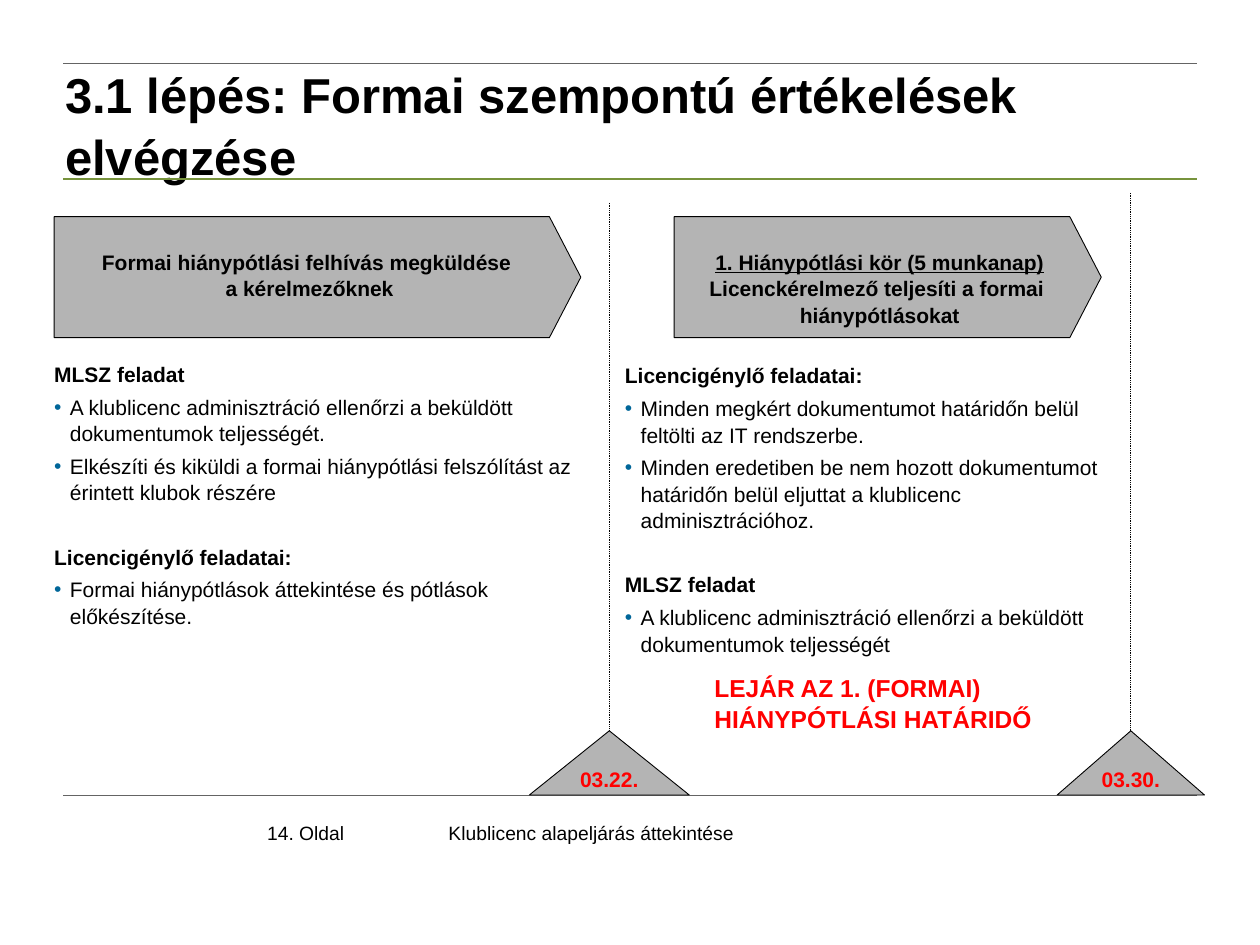
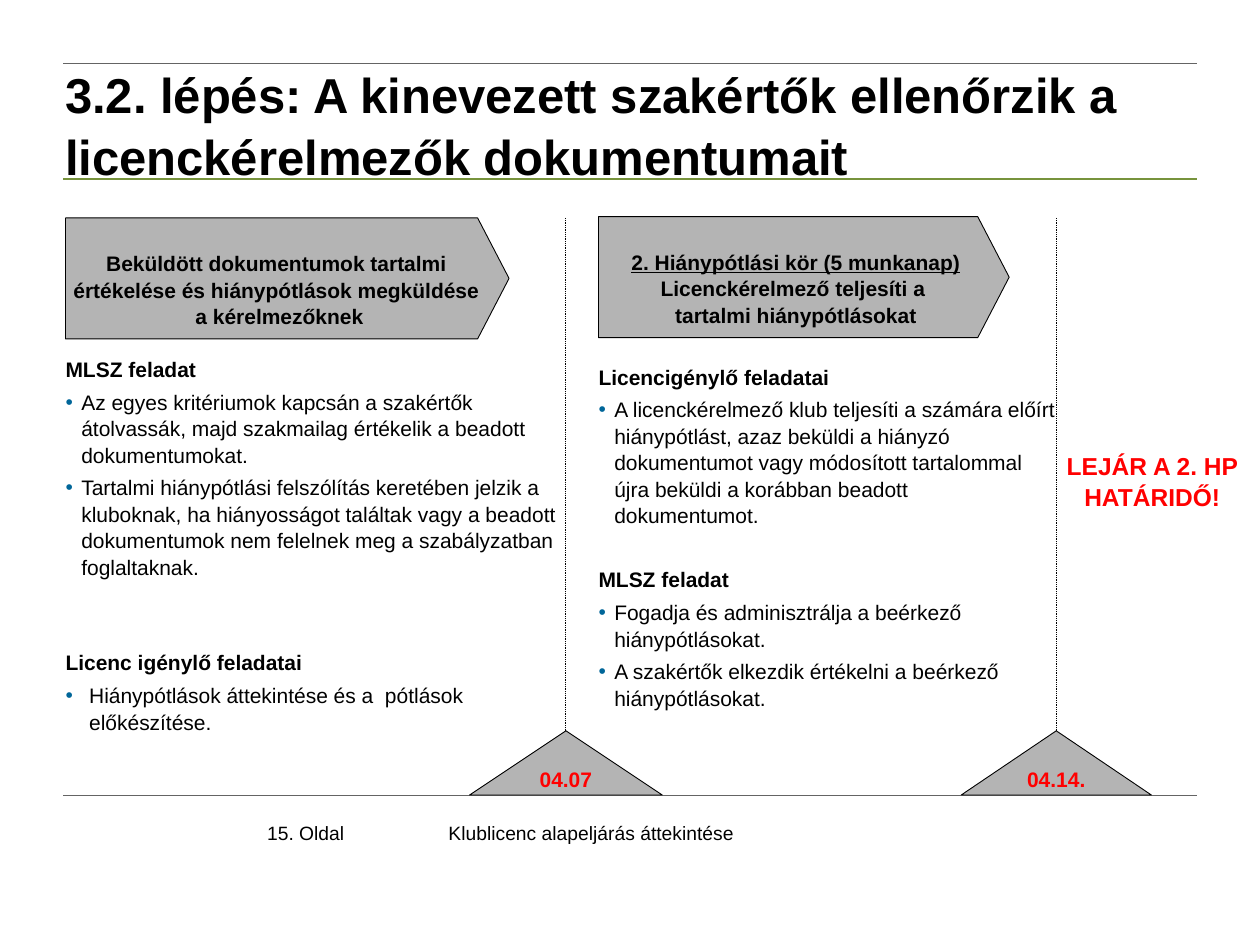
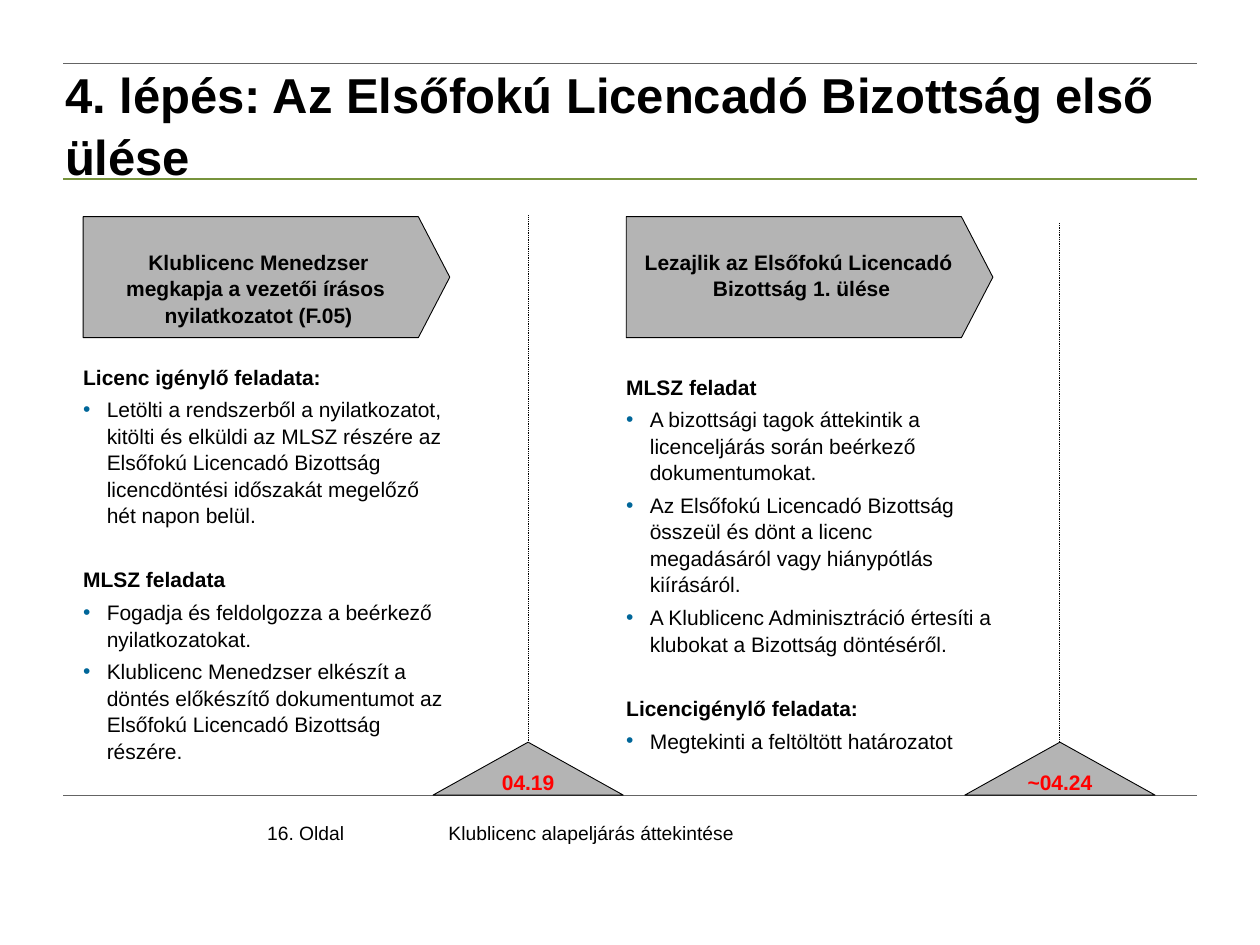
from lxml.etree import SubElement
from pptx import Presentation
from pptx.dml.color import RGBColor
from pptx.enum.dml import MSO_LINE
from pptx.enum.shapes import MSO_CONNECTOR, MSO_SHAPE
from pptx.enum.text import MSO_ANCHOR, MSO_AUTO_SIZE, PP_ALIGN
from pptx.oxml.ns import qn
from pptx.util import Pt

# Shared look
FONT = "Arial"
BLACK, RED, GREY = "000000", "FF0000", "B4B4B4"
RULE, GREEN, BLUE = "646464", "77933C", "006699"
LEFT, RIGHT, BASE = 36, 684, 454.32
PLATE = 69.12
GAP = 18
LABEL = "Klublicenc alapeljárás áttekintése"
rgb = RGBColor.from_string


def style(frame, size, color=BLACK, bold=False, align=PP_ALIGN.LEFT,
          inset=(0, 0, 0, 0), anchor=MSO_ANCHOR.TOP, wrap=True):
    frame.auto_size = MSO_AUTO_SIZE.NONE
    frame.word_wrap = wrap
    frame.vertical_anchor = anchor
    frame.margin_left, frame.margin_top, frame.margin_right, frame.margin_bottom = map(Pt, inset)
    for para in frame.paragraphs:
        para.alignment = align
        para.line_spacing = 1.05
        for run in para.runs:
            run.font.name = FONT
            run.font.size = Pt(size)
            run.font.bold = bold
            run.font.color.rgb = rgb(color)


def rule(slide, x1, y1, x2, y2, color, width):
    line = slide.shapes.add_connector(MSO_CONNECTOR.STRAIGHT, Pt(x1), Pt(y1), Pt(x2), Pt(y2))
    line.line.color.rgb = rgb(color)
    line.line.width = Pt(width)
    SubElement(line._element.spPr, qn("a:effectLst"))
    return line


# Each step holds two stages: plate, list (blocks of gap, indent, head, items) and date marker
STEPS = [
    {
        "title": "3.1 lépés: Formai szempontú értékelések elvégzése",
        "peak": 417.6,
        "alert": ("LEJÁR AZ 1. (FORMAI) HIÁNYPÓTLÁSI HATÁRIDŐ",
                  (408.24, 383.76, 211.68, 88.56), PP_ALIGN.LEFT),
        "stages": [
            {
                "plate": (30.96, 123.84, 300.96), "under": False,
                "head": "Formai hiánypótlási felhívás megküldése \na kérelmezőknek",
                "list": (30.96, 205.92, 300.96, 179.28),
                "blocks": [
                    (0, 9, "MLSZ feladat", [
                        "A klublicenc adminisztráció ellenőrzi a beküldött dokumentumok teljességét.",
                        "Elkészíti és kiküldi a formai hiánypótlási felszólítást az érintett klubok részére"]),
                    (GAP, 9, "Licencigénylő feladatai:", [
                        "Formai hiánypótlások áttekintése és pótlások előkészítése."]),
                ],
                "mark": (348.2, 91.44, 115.92, "03.22."),
            },
            {
                "plate": (385.2, 123.84, 244.08), "under": True,
                "head": "1. Hiánypótlási kör (5 munkanap)\nLicenckérelmező teljesíti a formai \nhiánypótlásokat",
                "list": (357.12, 206.64, 272.16, 179.28),
                "blocks": [
                    (0, 9, "Licencigénylő feladatai:", [
                        "Minden megkért dokumentumot határidőn belül feltölti az IT rendszerbe.",
                        "Minden eredetiben be nem hozott dokumentumot határidőn belül eljuttat a klublicenc adminisztrációhoz."]),
                    (GAP, 9, "MLSZ feladat", [
                        "A klublicenc adminisztráció ellenőrzi a beküldött dokumentumok teljességét"]),
                ],
                "mark": (646.2, 84.24, 110.16, "03.30."),
            },
        ],
    },
    {
        "title": "3.2. lépés: A kinevezett szakértők ellenőrzik a licenckérelmezők dokumentumait",
        "peak": 417.6,
        "alert": ("LEJÁR A 2. HP HATÁRIDŐ!",
                  (596.88, 257.04, 123.12, 69.84), PP_ALIGN.CENTER),
        "stages": [
            {
                "plate": (37.44, 124.56, 253.44), "under": False,
                "head": "Beküldött dokumentumok tartalmi \nértékelése és hiánypótlások megküldése \na kérelmezőknek",
                "list": (37.44, 203.04, 293.04, 213.84),
                "blocks": [
                    (0, 9, "MLSZ feladat", [
                        "Az egyes kritériumok kapcsán a szakértők átolvassák, majd szakmailag értékelik a beadott dokumentumokat.",
                        "Tartalmi hiánypótlási felszólítás keretében jelzik a kluboknak, ha hiányosságot találtak vagy a beadott dokumentumok nem felelnek meg a szabályzatban foglaltaknak."]),
                    (2 * GAP, 13.5, "Licenc igénylő feladatai", [
                        "Hiánypótlások áttekintése és a  pótlások előkészítése."]),
                ],
                "mark": (323.4, 110.16, 124.56, "04.07"),
            },
            {
                "plate": (342, 123.84, 234.72), "under": True,
                "head": "2. Hiánypótlási kör (5 munkanap)\nLicenckérelmező teljesíti a \ntartalmi hiánypótlásokat",
                "list": (342, 207.36, 262.08, 196.56),
                "blocks": [
                    (0, 9, "Licencigénylő feladatai", [
                        "A licenckérelmező klub teljesíti a számára előírt hiánypótlást, azaz beküldi a hiányzó dokumentumot vagy módosított tartalommal újra beküldi a korábban beadott dokumentumot."]),
                    (GAP, 9, "MLSZ feladat", [
                        "Fogadja és adminisztrálja a beérkező hiánypótlásokat.",
                        "A szakértők elkezdik értékelni a beérkező hiánypótlásokat."]),
                ],
                "mark": (603.6, 108.72, 124.56, "04.14."),
            },
        ],
    },
    {
        "title": "4. lépés: Az Elsőfokú Licencadó Bizottság első ülése",
        "peak": 424.08,
        "alert": None,
        "stages": [
            {
                "plate": (47.52, 123.84, 209.52), "under": False,
                "head": "Klublicenc Menedzser\nmegkapja a vezetői írásos \nnyilatkozatot (F.05)",
                "list": (47.52, 207.36, 209.52, 208.8),
                "blocks": [
                    (0, 13.5, "Licenc igénylő feladata:", [
                        "Letölti a rendszerből a nyilatkozatot, kitölti és elküldi az MLSZ részére az Elsőfokú Licencadó Bizottság licencdöntési időszakát megelőző hét napon belül."]),
                    (GAP, 13.5, "MLSZ feladata", [
                        "Fogadja és feldolgozza a beérkező nyilatkozatokat.",
                        "Klublicenc Menedzser elkészít a döntés előkészítő dokumentumot az Elsőfokú Licencadó Bizottság részére."]),
                ],
                "mark": (301.8, 108.72, 123.12, "04.19"),
            },
            {
                "plate": (357.84, 123.84, 209.52), "under": False,
                "head": "Lezajlik az Elsőfokú Licencadó \nBizottság 1. ülése",
                "list": (357.84, 213.12, 209.52, 208.8),
                "blocks": [
                    (0, 13.5, "MLSZ feladat", [
                        "A bizottsági tagok áttekintik a licenceljárás során beérkező dokumentumokat.",
                        "Az Elsőfokú Licencadó Bizottság összeül és dönt a licenc megadásáról vagy hiánypótlás kiírásáról.",
                        "A Klublicenc Adminisztráció értesíti a klubokat a Bizottság döntéséről."]),
                    (GAP, 13.5, "Licencigénylő feladata:", [
                        "Megtekinti a feltöltött határozatot"]),
                ],
                "mark": (605.7, 108.72, 127.44, "~04.24"),
            },
        ],
    },
]

deck = Presentation()
deck.slide_width, deck.slide_height = Pt(720), Pt(540)

for page, step in enumerate(STEPS, 14):
    slide = deck.slides.add_slide(deck.slide_layouts[3])
    shapes = slide.shapes

    # Rules and footer
    for y, color, width in [(36, RULE, 0.5), (102.24, GREEN, 1), (BASE, RULE, 0.25)]:
        rule(slide, LEFT, y, RIGHT, y, color, width)
    for text, x, width in [(LABEL, 256.32, 246.96), (f"{page}. Oldal", 152.64, 52.56)]:
        foot = shapes.add_textbox(Pt(x), Pt(468.72), Pt(width), Pt(15.84))
        foot.text_frame.text = text
        style(foot.text_frame, 11)

    # Title
    title = shapes.title
    title.left, title.top, title.width, title.height = map(Pt, (30, 31.68, 654, 74.88))
    title.text_frame.text = step["title"]
    style(title.text_frame, 28, bold=True, inset=(7.2, 3.6, 7.2, 3.6))

    for spot, stage in enumerate(step["stages"], 1):
        # Stage plate
        x, y, width = stage["plate"]
        plate = shapes.add_shape(MSO_SHAPE.PENTAGON, Pt(x), Pt(y), Pt(width), Pt(PLATE))
        plate.adjustments[0] = 0.26
        plate.text_frame.text = stage["head"]
        style(plate.text_frame, 12, bold=True, align=PP_ALIGN.CENTER,
              inset=(3.6, 18, 3.6, 3.6), wrap=False)
        if stage["under"]:
            plate.text_frame.paragraphs[0].runs[0].font.underline = True

        # Task list
        body = slide.placeholders[spot]
        body.left, body.top, body.width, body.height = map(Pt, stage["list"])
        rows = []
        for gap, indent, head, items in stage["blocks"]:
            rows.append((head, gap, 0))
            rows += [(item, 0, indent) for item in items]
        body.text_frame.text = "\n".join(row[0] for row in rows)
        style(body.text_frame, 12)
        for para, (text, gap, indent) in zip(body.text_frame.paragraphs, rows):
            prop = para._p.get_or_add_pPr()
            prop.set("marL", str(Pt(indent)))
            prop.set("indent", str(-Pt(indent)))
            if indent:
                tint = SubElement(prop, qn("a:buClr"))
                SubElement(tint, qn("a:srgbClr"), val=BLUE)
                SubElement(prop, qn("a:buChar"), char="•")
            else:
                SubElement(prop, qn("a:buNone"))
                para.runs[0].font.bold = True
            para.space_before, para.space_after = Pt(gap), Pt(3.6)

        # Date marker
        mid, width, top, date = stage["mark"]
        peak = step["peak"]
        dots = rule(slide, mid, top, mid, peak, BLACK, 0.5)
        dots.line.dash_style = MSO_LINE.ROUND_DOT
        mark = shapes.add_shape(MSO_SHAPE.ISOSCELES_TRIANGLE, Pt(mid - width / 2), Pt(peak),
                                Pt(width), Pt(BASE - peak))
        mark.text_frame.text = date
        style(mark.text_frame, 12, RED, True, PP_ALIGN.CENTER, (3.6,) * 4, MSO_ANCHOR.MIDDLE)

        for shape in (plate, mark):
            shape.shadow.inherit = False
            shape.fill.solid()
            shape.fill.fore_color.rgb = rgb(GREY)
            shape.line.color.rgb = rgb(BLACK)
            shape.line.width = Pt(0.5)

    # Deadline alert
    if step["alert"]:
        text, box, align = step["alert"]
        alert = shapes.add_textbox(*map(Pt, box))
        alert.text_frame.text = text
        style(alert.text_frame, 14, RED, True, align)

deck.save("out.pptx")
